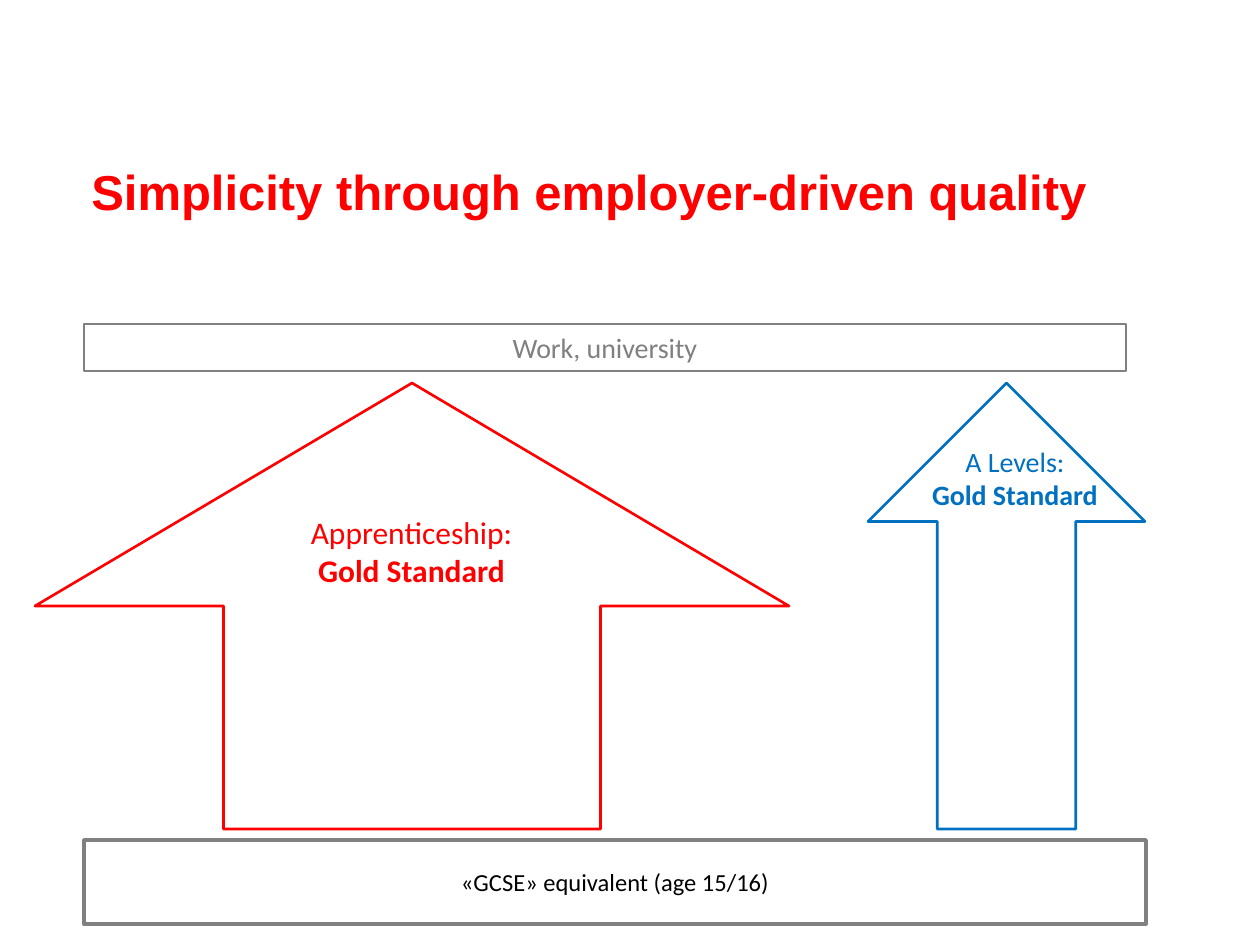
from dataclasses import dataclass

import pptx
import pptx.dml.color
import pptx.enum.shapes
import pptx.enum.text
import pptx.util

PIXELS_PER_INCH = 126
SHAPES = pptx.enum.shapes.MSO_SHAPE
ANCHOR = pptx.enum.text.MSO_ANCHOR
ALIGN = pptx.enum.text.PP_ALIGN


def px(count):
    return pptx.util.Inches(count / PIXELS_PER_INCH)


@dataclass(frozen=True)
class Theme:
    red: str = "FF0000"
    blue: str = "0070C0"
    grey: str = "808080"
    black: str = "000000"
    white: str = "FFFFFF"
    title_font: str = "Arial"
    body_font: str = "Calibri"
    title_size: int = 28
    large_size: int = 18
    medium_size: int = 16
    small_size: int = 14


class SlideBuilder:
    """Holds the theme and the current page; places are (left, top, width, height) in px."""

    def __init__(self, theme, page):
        self.theme = theme
        self.page = page

    def add_lines(self, box, lines, size, color, font=None, align=ALIGN.CENTER, anchor=ANCHOR.TOP):
        """Fill a box with lines, each given as (wording, bold)."""
        frame = box.text_frame
        frame.word_wrap = True
        frame.vertical_anchor = anchor
        for index, (wording, bold) in enumerate(lines):
            para = frame.paragraphs[0] if index == 0 else frame.add_paragraph()
            para.alignment = align
            span = para.add_run()
            span.text = wording
            span.font.name = font or self.theme.body_font
            span.font.size = pptx.util.Pt(size)
            span.font.bold = bold
            span.font.color.rgb = pptx.dml.color.RGBColor.from_string(color)

    def label(self, place, lines, size, color, **style):
        box = self.page.shapes.add_textbox(*map(px, place))
        self.add_lines(box, lines, size, color, **style)

    def outline(self, kind, place, color, width, fill=None):
        shape = self.page.shapes.add_shape(kind, *map(px, place))
        shape.shadow.inherit = False
        if fill:
            shape.fill.solid()
            shape.fill.fore_color.rgb = pptx.dml.color.RGBColor.from_string(fill)
        else:
            shape.fill.background()
        shape.line.color.rgb = pptx.dml.color.RGBColor.from_string(color)
        shape.line.width = pptx.util.Pt(width)
        return shape

    def bar(self, place, wording, size, text_color, line_width):
        box = self.outline(SHAPES.RECTANGLE, place, self.theme.grey, line_width)
        self.add_lines(box, [(wording, False)], size, text_color, anchor=ANCHOR.MIDDLE)

    def pathway(self, left, width, color):
        """Draw an upward arrow between the two bars."""
        arrow = self.outline(SHAPES.UP_ARROW, (left, 383, width, 446), color, 1.5, self.theme.white)
        arrow.adjustments[0] = 0.5
        arrow.adjustments[1] = 0.5


def main():
    theme = Theme()
    deck = pptx.Presentation()
    deck.slide_width = pptx.util.Inches(10)
    deck.slide_height = pptx.util.Inches(7.5)
    page = deck.slides.add_slide(deck.slide_layouts[6])
    builder = SlideBuilder(theme, page)

    builder.label((79, 155, 1169, 98), [("Simplicity through employer-driven quality", True)],
                  theme.title_size, theme.red, font=theme.title_font, align=ALIGN.LEFT)
    builder.bar((84, 840, 1062, 84), "«GCSE» equivalent (age 15/16)",
                theme.small_size, theme.black, 2)
    builder.pathway(35, 754, theme.red)
    builder.label((270, 507, 283, 89), [("Apprenticeship:", False), ("Gold Standard", True)],
                  theme.large_size, theme.red)
    builder.bar((84, 324, 1042, 47), "Work, university", theme.medium_size, theme.grey, 0.75)
    builder.pathway(868, 277, theme.blue)
    builder.label((904, 438, 222, 115), [("A Levels:", False), ("Gold Standard", True)],
                  theme.medium_size, theme.blue)

    deck.save("out.pptx")


if __name__ == "__main__":
    main()
